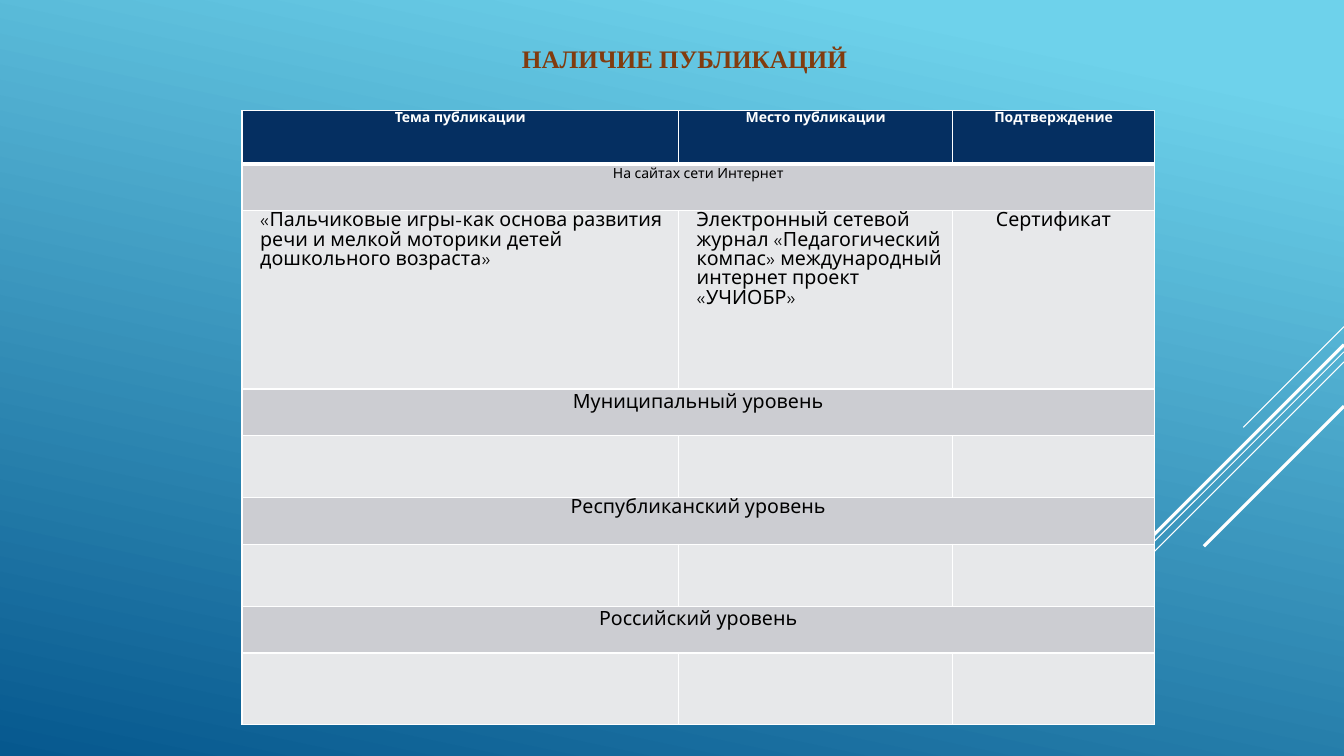
from lxml.etree import SubElement
from pptx import Presentation
from pptx.dml.color import RGBColor
from pptx.enum.shapes import MSO_CONNECTOR
from pptx.enum.text import MSO_ANCHOR, MSO_AUTO_SIZE, PP_ALIGN
from pptx.oxml import parse_xml
from pptx.oxml.ns import nsdecls, qn
from pptx.util import Inches, Pt

WHITE = RGBColor(0xFF, 0xFF, 0xFF)
BLACK = RGBColor(0, 0, 0)
BROWN = RGBColor(0x81, 0x3C, 0x0F)
NAVY = RGBColor(0x05, 0x2F, 0x61)
BAND_GRAY = RGBColor(0xCC, 0xCD, 0xD2)
LIGHT_GRAY = RGBColor(0xE7, 0xE8, 0xEA)
SKY = RGBColor(0x6E, 0xD2, 0xEB)
DEEP_BLUE = RGBColor(0x06, 0x58, 0x8E)

TITLE_FONT = "Times New Roman"
TABLE_FONT = "League Spartan"
NARROW_MARGINS = (0.06, 0.01, 0.06, 0)
WIDE_MARGINS = (0.08, 0.04, 0.08, 0.04)

COLUMN_WIDTHS = (4.33, 2.72, 2)
ROW_HEIGHTS = (0.53, 0.46, 1.77, 0.46, 0.62, 0.46, 0.62, 0.46, 0.71)
HEADERS = ("Тема публикации", "Место публикации", "Подтверждение")
PUBLICATION = (
    "«Пальчиковые игры-как основа развития речи и мелкой моторики детей дошкольного возраста»",
    "Электронный сетевой журнал «Педагогический компас» международный интернет проект «УЧИОБР»",
    "Сертификат",
)
SECTIONS = {
    1: ("На сайтах сети Интернет", 10, WIDE_MARGINS),
    3: ("Муниципальный уровень", 14, WIDE_MARGINS),
    5: ("Республиканский уровень", 14, NARROW_MARGINS),
    7: ("Российский уровень", 14, WIDE_MARGINS),
}
DIAGONALS = (
    (3.24, 1, 0.75),
    (3.49, 3.26, 0.75),
    (3.59, 2.07, 0.75),
    (3.42, 1.91, 2.25),
    (4.03, 1.39, 2.25),
)


def paint_background(slide):
    fill = slide.background.fill
    fill.gradient()
    fill.gradient_angle = 258
    for stop, position, color in zip(fill.gradient_stops, (0.1, 1), (SKY, DEEP_BLUE)):
        stop.position = position
        stop.color.rgb = color


def add_diagonals(slide, right):
    for top, run, weight in DIAGONALS:
        connector = slide.shapes.add_connector(
            MSO_CONNECTOR.STRAIGHT,
            Inches(right), Inches(top), Inches(right - run), Inches(top + run),
        )
        connector.line.color.rgb = WHITE
        connector.line.width = Pt(weight)
        SubElement(connector._element.spPr, qn("a:effectLst"))


def place_title(slide, left, top, width, height):
    title = slide.shapes.title
    title.left, title.top = Inches(left), Inches(top)
    title.width, title.height = Inches(width), Inches(height)
    frame = title.text_frame
    frame.text = "НАЛИЧИЕ ПУБЛИКАЦИЙ"
    frame.word_wrap = False
    frame.auto_size = MSO_AUTO_SIZE.NONE
    frame.vertical_anchor = MSO_ANCHOR.TOP
    paragraph = frame.paragraphs[0]
    paragraph.alignment = PP_ALIGN.CENTER
    font = paragraph.runs[0].font
    font.name, font.size, font.bold = TITLE_FONT, Pt(18), True
    font.color.rgb = BROWN


def style_cell(cell, color, top=1, bottom=1):
    cell.fill.solid()
    cell.fill.fore_color.rgb = color
    properties = cell._tc.get_or_add_tcPr()
    for index, (side, weight) in enumerate(zip("LRTB", (1, 1, top, bottom))):
        border = parse_xml(
            f'<a:ln{side} {nsdecls("a")} w="{Pt(weight)}"><a:solidFill>'
            f'<a:srgbClr val="{WHITE}"/></a:solidFill></a:ln{side}>'
        )
        properties.insert(index, border)


def write_cell(cell, text, size, color=BLACK, bold=False, centered=True, margins=NARROW_MARGINS):
    cell.margin_left, cell.margin_top, cell.margin_right, cell.margin_bottom = map(Inches, margins)
    cell.text_frame.text = text
    paragraph = cell.text_frame.paragraphs[0]
    paragraph.line_spacing = 1.07
    paragraph.space_after = Pt(8)
    if centered:
        paragraph.alignment = PP_ALIGN.CENTER
    else:
        paragraph._p.get_or_add_pPr().set("marL", str(Inches(0.12)))
    font = paragraph.runs[0].font
    font.name, font.size, font.bold = TABLE_FONT, Pt(size), bold
    font.color.rgb = color


def add_publications_table(slide, left, top):
    table = slide.shapes.add_table(
        len(ROW_HEIGHTS), len(COLUMN_WIDTHS), Inches(left), Inches(top),
        Inches(sum(COLUMN_WIDTHS)), Inches(sum(ROW_HEIGHTS)),
    ).table
    table.first_row = table.horz_banding = False
    for column, width in zip(table.columns, COLUMN_WIDTHS):
        column.width = Inches(width)
    for index, (row, height) in enumerate(zip(table.rows, ROW_HEIGHTS)):
        row.height = Inches(height)
        color = NAVY if index == 0 else BAND_GRAY if index in SECTIONS else LIGHT_GRAY
        for cell in row.cells:
            style_cell(cell, color, 3 if index == 1 else 1, 3 if index == 0 else 1)

    for column, (header, entry) in enumerate(zip(HEADERS, PUBLICATION)):
        write_cell(table.cell(0, column), header, 10, WHITE, bold=True)
        write_cell(table.cell(2, column), entry, 14, centered=column == 2)
    for index, (text, size, margins) in SECTIONS.items():
        heading = table.cell(index, 0)
        heading.merge(table.cell(index, 2))
        write_cell(heading, text, size, margins=margins)


def main():
    presentation = Presentation()
    presentation.slide_width = Inches(13.33)
    presentation.slide_height = Inches(7.5)
    slide = presentation.slides.add_slide(presentation.slide_layouts[5])
    paint_background(slide)
    add_diagonals(slide, 13.33)
    place_title(slide, 5.03, 0.38, 3.52, 0.4)
    add_publications_table(slide, 2.4, 1.1)
    presentation.save("out.pptx")


if __name__ == "__main__":
    main()
